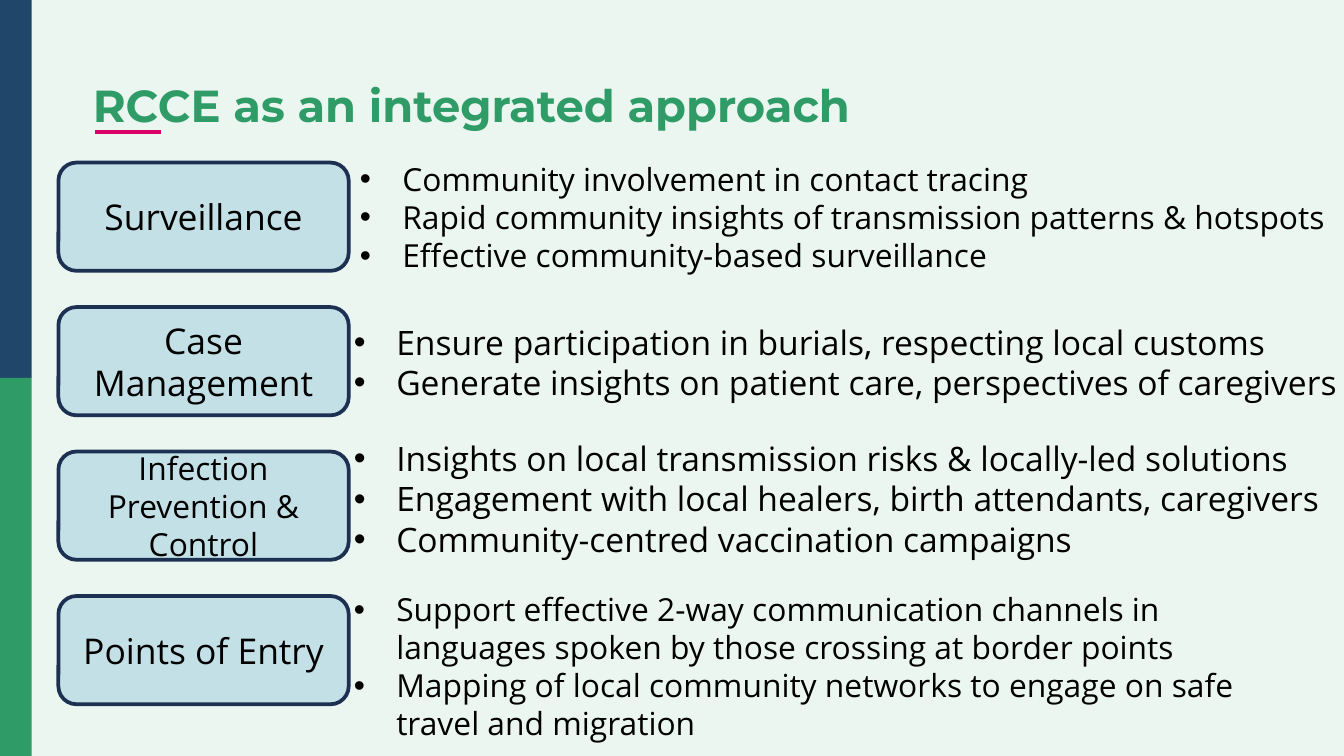
from lxml.etree import SubElement
from pptx import Presentation
from pptx.dml.color import RGBColor
from pptx.enum.shapes import MSO_CONNECTOR as Connector, MSO_SHAPE as Shape
from pptx.enum.text import MSO_ANCHOR as Anchor, MSO_AUTO_SIZE as AutoSize, PP_ALIGN as Align
from pptx.oxml.ns import qn
from pptx.util import Emu, Pt

EMU_PER_PX = 4572  # 200 px to the inch
SLIDE_WIDTH, SLIDE_HEIGHT = 2000, 1125

MINT = RGBColor(0xEC, 0xF6, 0xF1)
GREEN = RGBColor(0x2F, 0x9C, 0x67)
NAVY = RGBColor(0x20, 0x46, 0x69)
PINK = RGBColor(0xD9, 0x03, 0x68)
PALE_BLUE = RGBColor(0xC2, 0xE0, 0xE5)
OUTLINE = RGBColor(0x1C, 0x30, 0x52)
BLACK = RGBColor(0, 0, 0)

# pillar, pillar text size, bullet box (left, top, width, height), bullet size, bullets
PILLARS = [
    ("Surveillance", 19, (516, 228, 1482, 192), 17, [
        "Community involvement in contact tracing",
        "Rapid community insights of transmission patterns & hotspots",
        "Effective community-based surveillance",
    ]),
    ("Case Management", 19, (507, 469, 1518, 142), 18, [
        "Ensure participation in burials, respecting local customs",
        "Generate insights on patient care, perspectives of caregivers",
    ]),
    ("Infection Prevention & Control", 17, (507, 642, 1518, 202), 18, [
        "Insights on local transmission risks & locally-led solutions",
        "Engagement with local healers, birth attendants, caregivers",
        "Community-centred vaccination campaigns",
    ]),
    ("Points of Entry", 19, (507, 868, 1476, 250), 17, [
        "Support effective 2-way communication channels in languages "
        "spoken by those crossing at border points",
        "Mapping of local community networks to engage on safe "
        "travel and migration",
    ]),
]
PILLAR_TOP = 242
PILLAR_STEP = 215


def px(length):
    return Emu(round(length * EMU_PER_PX))


def box(*lengths):
    return [px(length) for length in lengths]


def set_all(target, values):
    for name, value in values.items():
        setattr(target, name, value)


def write(paragraph, text, size, font="Open Sans", color=BLACK, bold=False):
    run = paragraph.add_run()
    run.text = text
    set_all(run.font, {"name": font, "size": Pt(size), "bold": bold})
    run.font.color.rgb = color


def add_block(slide, preset, bounds, fill):
    block = slide.shapes.add_shape(preset, *box(*bounds))
    block.shadow.inherit = False
    block.fill.solid()
    block.fill.fore_color.rgb = fill
    block.line.fill.background()
    return block


def add_title(slide, text):
    title = slide.shapes.title
    set_all(title, dict(zip(("left", "top", "width", "height"), box(138, 114, 1724, 92))))
    frame = title.text_frame
    set_all(frame, {
        "margin_left": 0, "margin_right": px(20),
        "margin_top": px(10), "margin_bottom": px(10),
        "vertical_anchor": Anchor.TOP, "word_wrap": True,
        "auto_size": AutoSize.SHAPE_TO_FIT_TEXT,
    })
    heading = frame.paragraphs[0]
    set_all(heading, {"alignment": Align.LEFT, "line_spacing": 0.9, "space_before": Pt(0)})
    write(heading, text, 24, "Montserrat", GREEN, True)


def add_title_rule(slide):
    rule = slide.shapes.add_connector(Connector.STRAIGHT, *box(142, 197, 239, 197))
    rule.line.color.rgb = PINK
    rule.line.width = Pt(2.25)
    SubElement(rule._element.spPr, qn("a:effectLst"))


def add_pillar(slide, top, name, size):
    pillar = add_block(slide, Shape.ROUNDED_RECTANGLE, (87, top, 432, 161), PALE_BLUE)
    pillar.line.color.rgb = OUTLINE
    pillar.line.width = Pt(2)
    frame = pillar.text_frame
    set_all(frame, {"word_wrap": True, "vertical_anchor": Anchor.MIDDLE})
    frame.paragraphs[0].alignment = Align.CENTER
    write(frame.paragraphs[0], name, size)


def add_bullet(paragraph):
    """Give the paragraph a black round bullet with a hanging indent."""
    properties = paragraph._p.get_or_add_pPr()
    properties.set("marL", str(px(63)))
    properties.set("indent", str(px(-64)))
    color = SubElement(properties, qn("a:buClr"))
    SubElement(color, qn("a:srgbClr"), val=str(BLACK))
    SubElement(properties, qn("a:buFont"), typeface="Arial")
    SubElement(properties, qn("a:buChar"), char="•")


def add_bullets(slide, bounds, size, bullets):
    frame = slide.shapes.add_textbox(*box(*bounds)).text_frame
    set_all(frame, {"word_wrap": True, "auto_size": AutoSize.SHAPE_TO_FIT_TEXT})
    for index, text in enumerate(bullets):
        paragraph = frame.add_paragraph() if index else frame.paragraphs[0]
        add_bullet(paragraph)
        write(paragraph, text, size)


def main():
    deck = Presentation()
    set_all(deck, {"slide_width": px(SLIDE_WIDTH), "slide_height": px(SLIDE_HEIGHT)})
    slide = deck.slides.add_slide(deck.slide_layouts[5])
    slide.background.fill.solid()
    slide.background.fill.fore_color.rgb = MINT

    half = SLIDE_HEIGHT / 2
    for top, color in ((0, NAVY), (half, GREEN)):
        add_block(slide, Shape.RECTANGLE, (0, top, 47, half), color)
    add_title_rule(slide)
    add_title(slide, "RCCE as an integrated approach")

    for row, (name, name_size, bounds, size, bullets) in enumerate(PILLARS):
        add_pillar(slide, PILLAR_TOP + row * PILLAR_STEP, name, name_size)
        add_bullets(slide, bounds, size, bullets)

    deck.save("out.pptx")


if __name__ == "__main__":
    main()
